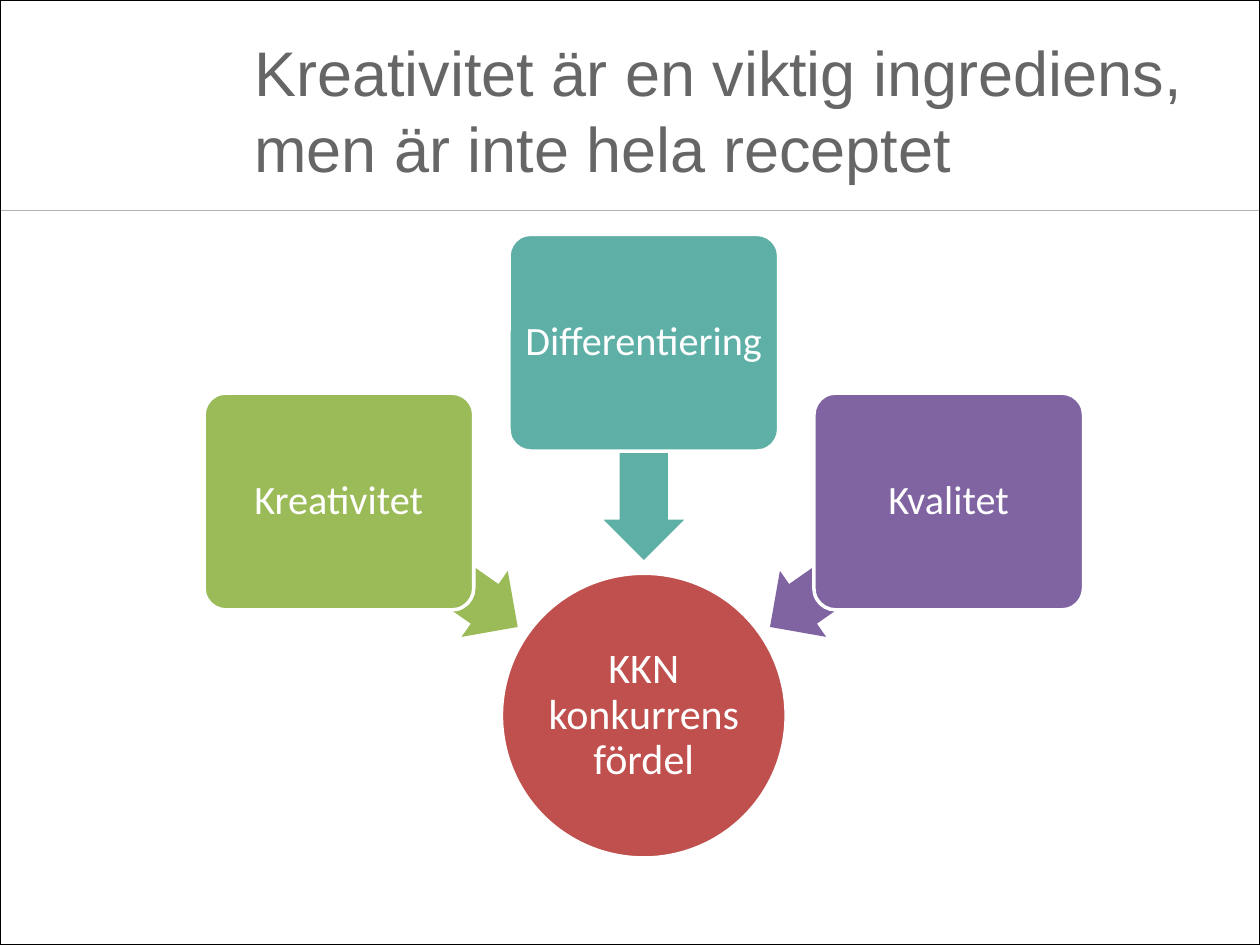
import pptx
import pptx.util
from lxml import etree
from pptx.dml.color import RGBColor
from pptx.enum.shapes import MSO_CONNECTOR, MSO_SHAPE
from pptx.enum.text import MSO_ANCHOR, PP_ALIGN
from pptx.oxml.ns import qn
from pptx.util import Inches

WHITE = RGBColor(0xFF, 0xFF, 0xFF)
BLACK = RGBColor(0x00, 0x00, 0x00)
GRAY = RGBColor(0x66, 0x66, 0x66)
RULE_GRAY = RGBColor(0xB3, 0xB3, 0xB3)
RED = RGBColor(0xC0, 0x50, 0x4D)
GREEN = RGBColor(0x9B, 0xBB, 0x59)
TEAL = RGBColor(0x5E, 0xAF, 0xA6)
PURPLE = RGBColor(0x80, 0x64, 0xA2)

WIDTH, HEIGHT = 10, 7.5
CENTER = 5.11
CIRCLE_SIZE = 2.26
BOX_WIDTH, BOX_HEIGHT, BOX_PITCH = 2.14, 1.72, 2.42
ARROW_WIDTH, ARROW_HEIGHT, ARROW_PITCH = 1.73, 0.64, 1.71

# label, color, column relative to the center, box top, arrow top, arrow rotation
FACTORS = [
    ("Kreativitet", GREEN, -1, 3.12, 4.16, 215),
    ("Differentiering", TEAL, 0, 1.86, 3.26, 270),
    ("Kvalitet", PURPLE, 1, 3.12, 4.16, 325),
]


def write_text(shape, text, *, font, size, color, insets, align=PP_ALIGN.LEFT,
               anchor=MSO_ANCHOR.MIDDLE, line_spacing=1.0):
    """Fill the shape with one paragraph; insets are left, top, right, bottom."""
    frame = shape.text_frame
    frame.word_wrap = True
    frame.vertical_anchor = anchor
    (frame.margin_left, frame.margin_top,
     frame.margin_right, frame.margin_bottom) = map(Inches, insets)
    paragraph = frame.paragraphs[0]
    paragraph.text = text
    paragraph.alignment = align
    paragraph.line_spacing = line_spacing
    paragraph.font.name = font
    paragraph.font.size = pptx.util.Pt(size)
    paragraph.font.color.rgb = color


class SlideBuilder:
    heading_font = "Arial"
    label_font = "Calibri"

    def __init__(self, slide):
        self.slide = slide

    def add_shape(self, kind, left, top, width, height, fill=None, line=None, line_width=2):
        shape = self.slide.shapes.add_shape(
            kind, Inches(left), Inches(top), Inches(width), Inches(height))
        shape.shadow.inherit = False
        if fill is None:
            shape.fill.background()
        else:
            shape.fill.solid()
            shape.fill.fore_color.rgb = fill
        if line is None:
            shape.line.fill.background()
        else:
            shape.line.color.rgb = line
            shape.line.width = pptx.util.Pt(line_width)
        return shape

    def add_rule(self, top):
        rule = self.slide.shapes.add_connector(
            MSO_CONNECTOR.STRAIGHT, 0, Inches(top), Inches(WIDTH), Inches(top))
        rule.line.color.rgb = RULE_GRAY
        rule.line.width = pptx.util.Pt(0.75)
        etree.SubElement(rule._element.spPr, qn("a:effectLst"))

    def add_title(self, text):
        box = self.slide.shapes.add_textbox(
            Inches(1.92), Inches(0.14), Inches(7.73), Inches(1.33))
        write_text(box, text, font=self.heading_font, size=36, color=GRAY,
                   insets=(0.1, 0.05, 0.1, 0), anchor=MSO_ANCHOR.BOTTOM)

    def add_label(self, shape, text, size, inset):
        write_text(shape, text, font=self.label_font, size=size, color=WHITE,
                   insets=[inset] * 4, align=PP_ALIGN.CENTER, line_spacing=0.9)

    def add_circle(self, text, top):
        circle = self.add_shape(MSO_SHAPE.OVAL, CENTER - CIRCLE_SIZE / 2, top,
                                CIRCLE_SIZE, CIRCLE_SIZE, RED, WHITE)
        self.add_label(circle, text, 24, 0.02)

    def add_arrow(self, center, top, color, rotation):
        arrow = self.add_shape(MSO_SHAPE.LEFT_ARROW, center - ARROW_WIDTH / 2, top,
                               ARROW_WIDTH, ARROW_HEIGHT, color)
        arrow.adjustments[0] = 0.6
        arrow.adjustments[1] = 0.5
        arrow.rotation = rotation

    def add_box(self, text, center, top, color):
        box = self.add_shape(MSO_SHAPE.ROUNDED_RECTANGLE, center - BOX_WIDTH / 2, top,
                             BOX_WIDTH, BOX_HEIGHT, color, WHITE)
        box.adjustments[0] = 0.1
        self.add_label(box, text, 23, 0.05)


def main():
    presentation = pptx.Presentation()
    presentation.slide_width = Inches(WIDTH)
    presentation.slide_height = Inches(HEIGHT)
    builder = SlideBuilder(presentation.slides.add_slide(presentation.slide_layouts[6]))

    builder.add_rule(1.67)
    builder.add_shape(MSO_SHAPE.RECTANGLE, 0, 0, WIDTH, HEIGHT, line=BLACK, line_width=0.75)
    builder.add_title("Kreativitet är en viktig ingrediens, men är inte hela receptet")
    builder.add_circle("KKN konkurrensfördel", 4.55)
    for label, color, column, box_top, arrow_top, rotation in FACTORS:
        builder.add_arrow(CENTER + column * ARROW_PITCH, arrow_top, color, rotation)
        builder.add_box(label, CENTER + column * BOX_PITCH, box_top, color)

    presentation.save("out.pptx")


if __name__ == "__main__":
    main()
